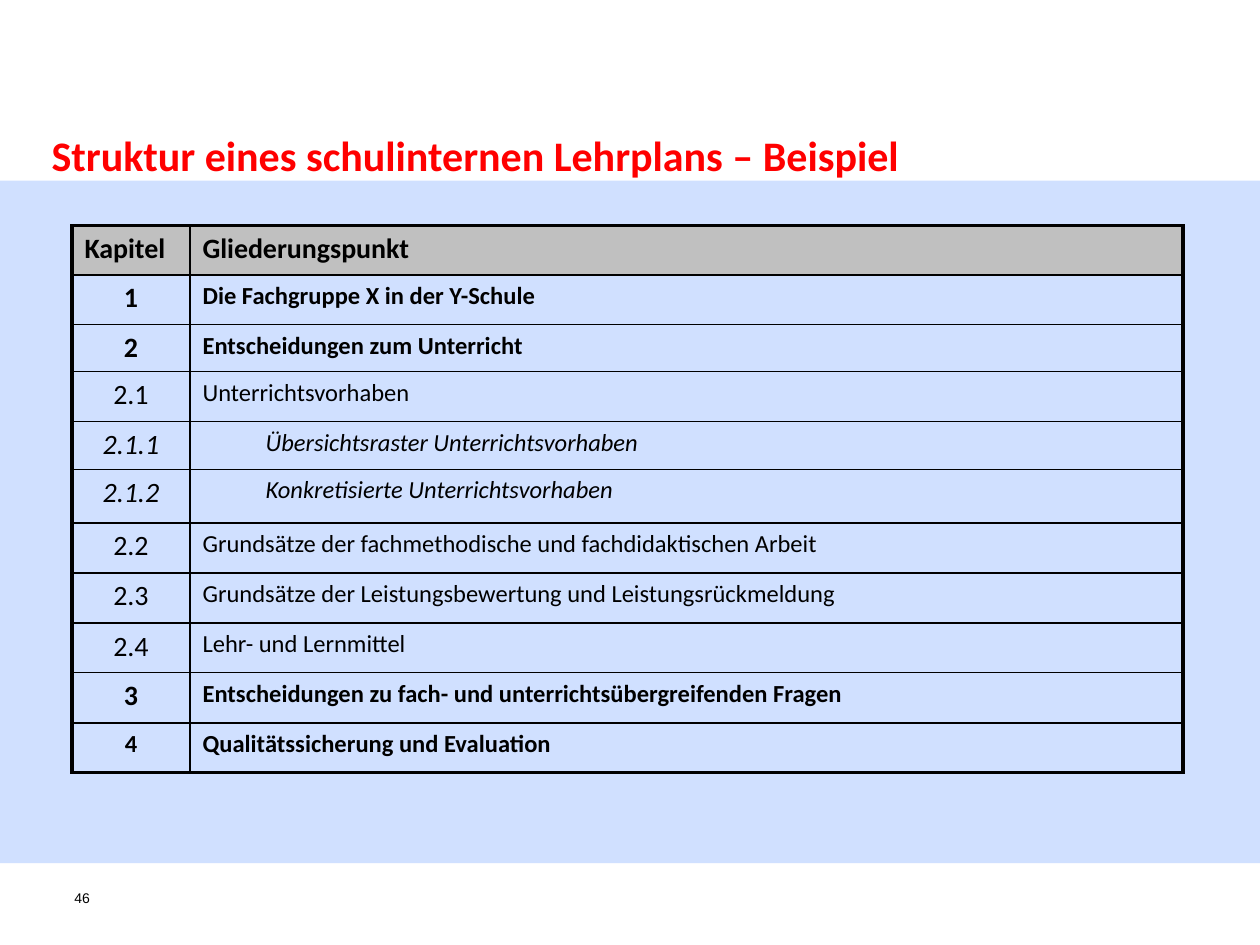
from lxml import etree
from pptx import Presentation
from pptx.dml.color import RGBColor
from pptx.enum.shapes import MSO_SHAPE as Shape
from pptx.enum.text import MSO_ANCHOR as Anchor, PP_ALIGN as Align
from pptx.oxml.ns import qn
from pptx.util import Cm, Pt

COLORS = {"band": "6699FF", "title": "FF0000", "header": "C0C0C0", "ink": "000000"}

FORMATS = {
    "title": {"name": "Calibri", "size": Pt(24), "bold": True},
    "page": {"name": "Arial", "size": Pt(8)},
    "header": {"size": Pt(16), "bold": True},
    "main": {"bold": True},
    "section": {},
    "detail": {"italic": True},
}

# Kind of row, chapter, heading, row height in cm
CHAPTERS = [
    ("header", "Kapitel", "Gliederungspunkt", 0.99),
    ("main", "1", "Die Fachgruppe X in der Y-Schule", 1.0),
    ("main", "2", "Entscheidungen zum Unterricht", 0.95),
    ("section", "2.1", "Unterrichtsvorhaben", 1.01),
    ("detail", "2.1.1", "Übersichtsraster Unterrichtsvorhaben", 0.96),
    ("detail", "2.1.2", "Konkretisierte Unterrichtsvorhaben", 1.08),
    ("section", "2.2", "Grundsätze der fachmethodische und fachdidaktischen Arbeit", 1.01),
    ("section", "2.3", "Grundsätze der Leistungsbewertung und Leistungsrückmeldung", 1.01),
    ("section", "2.4", "Lehr- und Lernmittel", 1.0),
    ("main", "3", "Entscheidungen zu fach- und unterrichtsübergreifenden Fragen", 1.01),
    ("main", "4", "Qualitätssicherung und Evaluation", 1.0),
]
CHAPTER_WIDTH = 2.38
THIN, THICK = Pt(1), Pt(2.25)


def rgb(name):
    return RGBColor.from_string(COLORS[name])


def write(paragraph, text, color="ink", **font_values):
    run = paragraph.add_run()
    run.text = text
    run.font.color.rgb = rgb(color)
    for attribute, value in font_values.items():
        setattr(run.font, attribute, value)


def add_label(slide, box, text, kind, color="ink"):
    frame = slide.shapes.add_textbox(*map(Cm, box)).text_frame
    values = {"word_wrap": True, "vertical_anchor": Anchor.TOP, "margin_left": 0,
              "margin_right": 0, "margin_top": 0, "margin_bottom": 0}
    for attribute, value in values.items():
        setattr(frame, attribute, value)
    write(frame.paragraphs[0], text, color, **FORMATS[kind])


def add_band(slide, box):
    band = slide.shapes.add_shape(Shape.RECTANGLE, *map(Cm, box))
    band.shadow.inherit = False
    band.line.fill.background()
    band.fill.solid()
    band.fill.fore_color.rgb = rgb("band")
    # 30 % opacity
    tint = band.fill._xPr.find(qn("a:solidFill"))[0]
    etree.SubElement(tint, qn("a:alpha"), val="30000")


def set_borders(cell, widths):
    properties = cell._tc.get_or_add_tcPr()
    for index, (side, width) in enumerate(widths.items()):
        line = etree.Element(qn(f"a:ln{side}"), w=str(width))
        fill = etree.SubElement(line, qn("a:solidFill"))
        etree.SubElement(fill, qn("a:srgbClr"), val=COLORS["ink"])
        properties.insert(index, line)


def fill_cell(cell, text, kind, size, centred):
    if kind == "header":
        cell.fill.solid()
        cell.fill.fore_color.rgb = rgb("header")
    else:
        cell.fill.background()
    paragraph = cell.text_frame.paragraphs[0]
    if centred:
        paragraph.alignment = Align.CENTER
    elif kind == "detail":
        paragraph.level = 1
        indent = paragraph._p.get_or_add_pPr()
        indent.set("marL", str(Cm(1.27)))
        indent.set("indent", "0")
    font_values = {"name": "Calibri", "size": size, "bold": False, "italic": False}
    write(paragraph, text, **(font_values | FORMATS[kind]))


def add_outline_table(slide, box):
    left, top, width = box
    height = sum(chapter[3] for chapter in CHAPTERS)
    last = len(CHAPTERS) - 1
    table = slide.shapes.add_table(
        len(CHAPTERS), 2, Cm(left), Cm(top), Cm(width), Cm(height)).table
    table.first_row = table.horz_banding = False
    table.columns[0].width = Cm(CHAPTER_WIDTH)
    table.columns[1].width = Cm(width - CHAPTER_WIDTH)

    for row, (kind, number, heading, row_height) in enumerate(CHAPTERS):
        table.rows[row].height = Cm(row_height)
        for column, text in enumerate((number, heading)):
            cell = table.cell(row, column)
            # Headings and the last chapter number are smaller
            size = Pt(14 if column == 1 or row == last else 16)
            fill_cell(cell, text, kind, size, column == 0 and row > 0)
            # Thick frame around the table, thin lines inside
            outer = {"L": column == 0, "R": column == 1, "T": row == 0, "B": row == last}
            set_borders(cell, {side: THICK if edge else THIN for side, edge in outer.items()})


def main():
    deck = Presentation()
    deck.slide_width, deck.slide_height = Cm(25.4), Cm(19.05)
    slide = deck.slides.add_slide(deck.slide_layouts[6])

    add_band(slide, (0, 3.64, 25.4, 13.76))
    add_label(slide, (1.04, 2.62, 22.4, 1.37),
              "Struktur eines schulinternen Lehrplans – Beispiel", "title", "title")
    add_outline_table(slide, (1.45, 4.55, 22.4))
    add_label(slide, (1.5, 17.93, 0.81, 0.94), "46", "page")

    deck.save("out.pptx")


if __name__ == "__main__":
    main()
